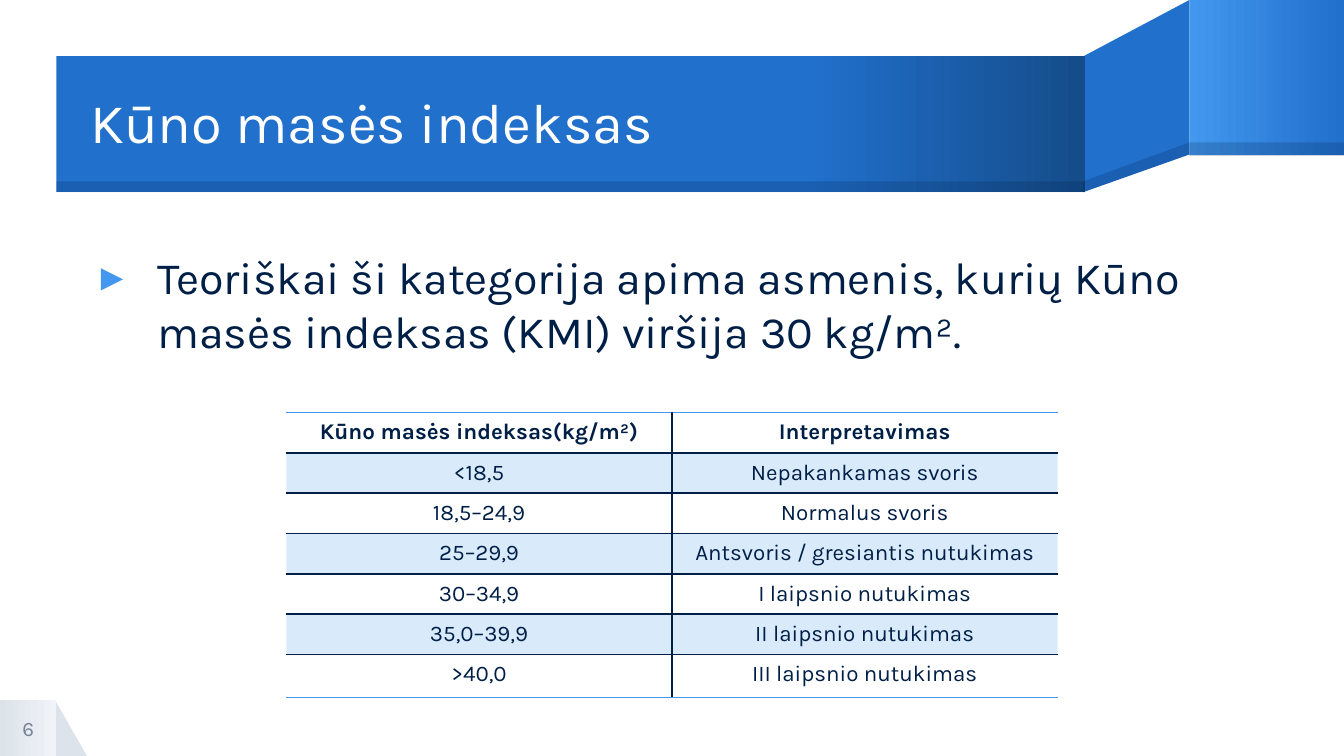
from dataclasses import dataclass

from lxml.etree import SubElement
from pptx import Presentation
from pptx.dml.color import RGBColor
from pptx.enum.shapes import MSO_SHAPE
from pptx.enum.text import MSO_ANCHOR, MSO_AUTO_SIZE, PP_ALIGN
from pptx.oxml.ns import qn
from pptx.util import Inches, Pt


@dataclass(frozen=True)
class Theme:
    font: str = "Karla"
    white: str = "FFFFFF"
    navy: str = "001F46"
    blue: str = "2170CC"
    sky: str = "4397EE"
    deep: str = "154C8A"
    gray: str = "DDE3EB"
    pale: str = "F0F3F7"
    slate: str = "748394"
    title: int = 30
    body: int = 24
    cell: int = 12
    page: int = 11


THEME = Theme()
PLAIN_GRID = "{2D5ABB26-0587-4C30-8999-92F81FD0307C}"
ROWS = [
    ("Kūno masės indeksas(kg/m²)", "Interpretavimas"),
    ("<18,5", "Nepakankamas svoris"),
    ("18,5–24,9", "Normalus svoris"),
    ("25–29,9", "Antsvoris / gresiantis nutukimas"),
    ("30–34,9", "I laipsnio nutukimas"),
    ("35,0–39,9", "II laipsnio nutukimas"),
    (">40,0", "III laipsnio nutukimas"),
]


def paint(fill, color):
    fill.solid()
    fill.fore_color.rgb = RGBColor.from_string(color)


def fade(props, percent):
    """Set the opacity of the solid fill held directly by props."""
    color = props.find(qn("a:solidFill")).find(qn("a:srgbClr"))
    SubElement(color, qn("a:alpha"), val=str(percent * 1000))


def finish(shape, color, alpha=None):
    shape.shadow.inherit = False
    shape.line.fill.background()
    paint(shape.fill, color)
    if alpha:
        fade(shape.element.spPr, alpha)


def add_block(slide, box, color, alpha=None, kind=MSO_SHAPE.RECTANGLE):
    shape = slide.shapes.add_shape(kind, *map(Inches, box))
    finish(shape, color, alpha)
    return shape


def add_blend(slide, box, stops):
    """Add a rectangle whose colour runs from left to right."""
    shape = add_block(slide, box, stops[0][1])
    shape.fill.gradient()
    shape.fill.gradient_angle = 0
    steps = shape.element.spPr.find(qn("a:gradFill")).find(qn("a:gsLst"))
    for old in list(steps):
        steps.remove(old)
    for place, color in stops:
        step = SubElement(steps, qn("a:gs"), pos=str(place * 1000))
        SubElement(step, qn("a:srgbClr"), val=color)


def add_fold(slide, points, color, alpha=None):
    first, *rest = [(Inches(x), Inches(y)) for x, y in points]
    path = slide.shapes.build_freeform(*first)
    path.add_line_segments(rest, close=True)
    finish(path.convert_to_shape(), color, alpha)


def write(para, text, size, color, bold=False):
    run = para.add_run()
    run.text = text
    run.font.name = THEME.font
    run.font.size = Pt(size)
    run.font.bold = bold
    run.font.color.rgb = RGBColor.from_string(color)


def set_frame(frame, anchor):
    frame.word_wrap = True
    frame.auto_size = MSO_AUTO_SIZE.NONE
    frame.vertical_anchor = anchor
    frame.margin_left = frame.margin_right = 0
    frame.margin_top = frame.margin_bottom = 0
    return frame.paragraphs[0]


def add_text(slide, box, anchor):
    frame = slide.shapes.add_textbox(*map(Inches, box)).text_frame
    return set_frame(frame, anchor)


def add_bullet(para, char, color):
    props = para._p.get_or_add_pPr()
    props.set("marL", str(Inches(0.5)))
    props.set("indent", str(Inches(-0.42)))
    SubElement(SubElement(props, qn("a:buClr")), qn("a:srgbClr"), val=color)
    SubElement(props, qn("a:buFont"), typeface=THEME.font)
    SubElement(props, qn("a:buChar"), char=char)


def add_ribbon(slide):
    left, fold, edge = 0.42, 8.06, 8.85
    top, low, shade = 0.42, 1.43, 1.35
    add_fold(slide, [(edge, 0), (fold, top), (fold, low), (edge, 1.15)], THEME.blue)
    add_blend(slide, (edge, 0, 1.15, 1.15), [(0, THEME.sky), (100, THEME.blue)])
    add_blend(slide, (left, top, 7.65, 1.01),
              [(0, THEME.blue), (73, THEME.blue), (100, THEME.deep)])
    add_fold(slide, [(edge, 1.06), (fold, shade), (fold, low), (edge, 1.15)],
             THEME.navy, 20)
    add_block(slide, (edge, 1.06, 1.15, 0.1), THEME.navy, 20)
    add_block(slide, (left, shade, 7.65, 0.08), THEME.navy, 20)


def add_page(slide, number):
    box = (0, 5.21, 0.42, 0.42)
    add_block(slide, (0.41, 5.21, 0.24, 0.42), THEME.gray,
              kind=MSO_SHAPE.RIGHT_TRIANGLE)
    add_blend(slide, box, [(0, THEME.gray), (100, THEME.pale)])
    para = add_text(slide, box, MSO_ANCHOR.MIDDLE)
    para.alignment = PP_ALIGN.CENTER
    write(para, number, THEME.page, THEME.slate)


def set_title(slide, text):
    title = slide.shapes.title
    title.left, title.top = Inches(0.67), Inches(0.43)
    title.width, title.height = Inches(7.39), Inches(1.01)
    title.element.getparent().append(title.element)  # in front of the ribbon
    para = set_frame(title.text_frame, MSO_ANCHOR.MIDDLE)
    para.alignment = PP_ALIGN.LEFT
    para.line_spacing = 0.9
    write(para, text, THEME.title, THEME.white)


def add_body(slide, text):
    para = add_text(slide, (0.67, 1.86, 9.21, 3.09), MSO_ANCHOR.TOP)
    add_bullet(para, "▸", THEME.sky)
    write(para, text, THEME.body, THEME.navy)


def set_edge(cell, side, color):
    line = SubElement(cell._tc.get_or_add_tcPr(), qn("a:ln" + side), w=str(Pt(1)))
    SubElement(SubElement(line, qn("a:solidFill")), qn("a:srgbClr"), val=color)


def add_grid(slide, rows):
    wide, high = 2.87, 0.3
    last = len(rows) - 1
    frame = slide.shapes.add_table(
        len(rows), 2, Inches(2.13), Inches(3.07),
        Inches(2 * wide), Inches(high * len(rows)))
    table = frame.table
    table._tbl.tblPr.find(qn("a:tableStyleId")).text = PLAIN_GRID
    table.horz_banding = False
    for col in table.columns:
        col.width = Inches(wide)
    for i, texts in enumerate(rows):
        table.rows[i].height = Inches(0.32 if i == last else high)
        for j, text in enumerate(texts):
            cell = table.cell(i, j)
            set_edge(cell, "L" if j else "R", THEME.navy)
            set_edge(cell, "T", THEME.navy if i else THEME.sky)
            set_edge(cell, "B", THEME.sky if i == last else THEME.navy)
            if i % 2:
                paint(cell.fill, THEME.sky)
                fade(cell._tc.tcPr, 20)
            else:
                cell.fill.background()
            para = cell.text_frame.paragraphs[0]
            para.alignment = PP_ALIGN.CENTER
            write(para, text, THEME.cell, THEME.navy, bold=i == 0)


def main():
    deck = Presentation()
    deck.slide_width, deck.slide_height = Inches(10), Inches(10 * 9 / 16)
    slide = deck.slides.add_slide(deck.slide_layouts[5])
    add_ribbon(slide)
    set_title(slide, "Kūno masės indeksas")
    add_body(slide, "Teoriškai ši kategorija apima asmenis, kurių Kūno masės "
                    "indeksas (KMI) viršija 30 kg/m².")
    add_page(slide, "6")
    add_grid(slide, ROWS)
    deck.save("out.pptx")


if __name__ == "__main__":
    main()
